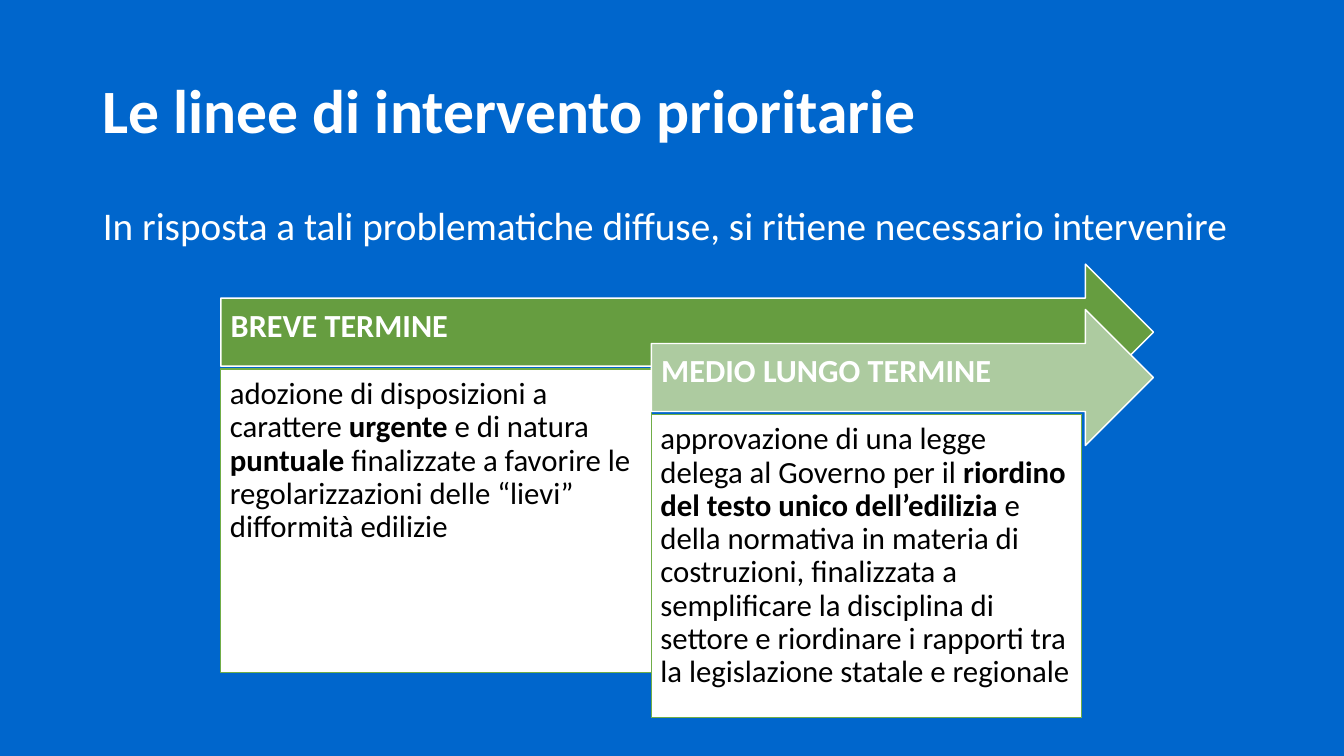
import pptx
import pptx.dml.color
import pptx.enum.shapes
import pptx.enum.text
import pptx.oxml.ns
import pptx.util
from lxml import etree
from pptx.util import Inches

ANCHOR = pptx.enum.text.MSO_ANCHOR
SHAPE = pptx.enum.shapes.MSO_SHAPE

PHASES = [
    ("BREVE TERMINE", "669D40", [
        ("adozione di disposizioni a carattere ", False),
        ("urgente", True),
        (" e di natura ", False),
        ("puntuale", True),
        (" finalizzate a favorire le regolarizzazioni delle “lievi” difformità edilizie", False),
    ]),
    ("MEDIO LUNGO TERMINE", "ADCBA0", [
        ("approvazione di una legge delega al Governo per il ", False),
        ("riordino del testo unico dell’edilizia ", True),
        ("e della normativa in materia di costruzioni, finalizzata a semplificare "
         "la disciplina di settore e riordinare i rapporti tra la legislazione "
         "statale e regionale", False),
    ]),
]


def paint(color_format, hex_color):
    color_format.rgb = pptx.dml.color.RGBColor.from_string(hex_color)


def write_text(shape, runs, size, color, anchor, margins=(0.1, 0.05, 0.1, 0.05)):
    """Fill a shape with one left-aligned paragraph of (text, bold) runs."""
    frame = shape.text_frame
    frame.word_wrap = True
    frame.auto_size = pptx.enum.text.MSO_AUTO_SIZE.NONE
    frame.vertical_anchor = anchor
    (frame.margin_left, frame.margin_top,
     frame.margin_right, frame.margin_bottom) = map(Inches, margins)
    paragraph = frame.paragraphs[0]
    paragraph.alignment = pptx.enum.text.PP_ALIGN.LEFT
    paragraph.line_spacing = 0.9
    paragraph.space_before = pptx.util.Pt(0)
    for text, bold in runs:
        run = paragraph.add_run()
        run.text = text
        run.font.name = "Calibri"
        run.font.size = pptx.util.Pt(size)
        run.font.bold = bold
        paint(run.font.color, color)
    return paragraph


def place(shape, left, top, width, height):
    shape.left, shape.top = Inches(left), Inches(top)
    shape.width, shape.height = Inches(width), Inches(height)


def add_block(slide, kind, box, fill, line):
    shape = slide.shapes.add_shape(kind, *map(Inches, box))
    shape.shadow.inherit = False
    shape.fill.solid()
    paint(shape.fill.fore_color, fill)
    paint(shape.line.color, line)
    shape.line.width = pptx.util.Pt(1)
    return shape


def add_heading(slide, left, top, width):
    # Title
    title = slide.shapes.title
    place(title, left, top, width, 1.45)
    write_text(title, [("Le linee di intervento prioritarie", True)],
               44, "FFFFFF", ANCHOR.MIDDLE)

    # Introductory sentence, without a bullet
    body = slide.placeholders[1]
    place(body, left, top + 1.6, width, 0.85)
    sentence = "In risposta a tali problematiche diffuse, si ritiene necessario intervenire"
    paragraph = write_text(body, [(sentence, False)], 28, "FFFFFF", ANCHOR.TOP)
    paragraph.space_before = pptx.util.Pt(10)
    properties = paragraph._p.get_or_add_pPr()
    properties.set("marL", "0")
    properties.set("indent", "0")
    etree.SubElement(properties, pptx.oxml.ns.qn("a:buNone"))


def add_phases(slide, left, top, width):
    """Staggered arrows that share one tip line, each with a panel below."""
    panel_width, panel_height, arrow_height = 4.27, 3.01, 1.35
    for index, (heading, color, runs) in enumerate(PHASES):
        offset = index * panel_width
        phase_left, phase_top = left + offset, top + index * 0.45

        arrow = add_block(slide, SHAPE.RIGHT_ARROW,
                          (phase_left, phase_top, width - offset, arrow_height),
                          color, "FFFFFF")
        write_text(arrow, [(heading, True)], 23, "FFFFFF", ANCHOR.MIDDLE,
                   (0.1, 0.1, 0.28, 0.21))

        panel = add_block(slide, SHAPE.RECTANGLE,
                          (phase_left, phase_top + 1.04, panel_width, panel_height),
                          "FFFFFF", "70AD47")
        write_text(panel, runs, 22, "000000", ANCHOR.TOP, (0.09,) * 4)


def main():
    presentation = pptx.Presentation()
    presentation.slide_width = Inches(13.33)
    presentation.slide_height = Inches(7.5)
    slide = presentation.slides.add_slide(presentation.slide_layouts[1])
    slide.background.fill.solid()
    paint(slide.background.fill.fore_color, "0066CC")
    add_heading(slide, 0.92, 0.4, 11.5)
    add_phases(slide, 2.19, 2.62, 9.25)
    presentation.save("out.pptx")


if __name__ == "__main__":
    main()
